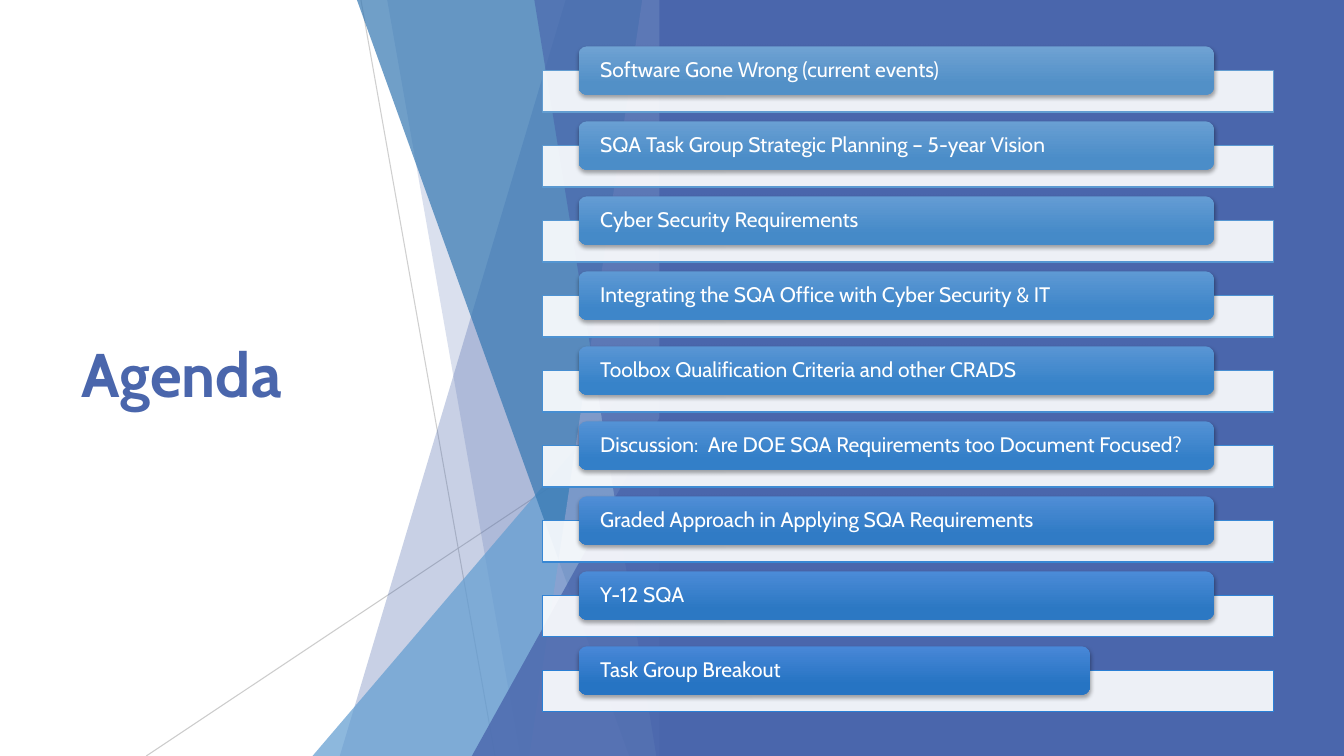
from lxml.etree import SubElement
from pptx import Presentation
from pptx.dml.color import RGBColor
from pptx.enum.shapes import MSO_CONNECTOR, MSO_SHAPE as SHAPE
from pptx.enum.text import MSO_ANCHOR, PP_ALIGN
from pptx.oxml.ns import qn
from pptx.util import Inches, Pt

WIDTH, HEIGHT = 13.33, 7.5
FONT = "Cabin"
WHITE = RGBColor(0xFF, 0xFF, 0xFF)
INDIGO = RGBColor(0x4A, 0x66, 0xAC)
SKY = RGBColor(0x62, 0x9D, 0xD1)
STEEL = RGBColor(0x34, 0x77, 0xB2)
LAVENDER = RGBColor(0x90, 0xA2, 0xCF)
GREY = RGBColor(0xBF, 0xBF, 0xBF)

TITLE = "Agenda"
# text, outline, gradient top, gradient bottom
AGENDA = [
    ("Software Gone Wrong (current events)", "629DD1", "6FA2D3", "5290C7"),
    ("SQA Task Group Strategic Planning – 5-year Vision", "5B99D1", "699FD3", "4B8DC8"),
    ("Cyber Security Requirements", "5496D2", "649CD4", "458AC8"),
    ("Integrating the SQA Office with Cyber Security & IT", "4D92D2", "5E99D4", "3E86C9"),
    ("Toolbox Qualification Criteria and other CRADS", "468ED2", "5995D4", "3783C9"),
    ("Discussion:  Are DOE SQA Requirements too Document Focused?",
     "3F8BD3", "5492D5", "337FC8"),
    ("Graded Approach in Applying SQA Requirements", "3787D4", "508ED6", "307BC5"),
    ("Y-12 SQA", "3083D5", "4B8BD7", "2C78C3"),
    ("Task Group Breakout", "297FD5", "4887D7", "2674C3"),
]

# x1, y1, x2, y2, opacity
HAIRLINES = [(3.58, 0, 4.91, HEIGHT, 75), (6.66, 4.03, 1.45, HEIGHT, 80)]
# Every facet reaches the right edge of the fan and the foot of the slide.
# A band has its left side's x at top and foot; a triangle its left and top.
FAN_RIGHT = 6.66
FACETS = [
    ("band", 5.61, 3.37, INDIGO, 30),
    ("band", 3.84, 5.16, INDIGO, 20),
    ("triangle", 3.1, 3.33, SKY, 72),
    ("band", 3.54, 6.24, STEEL, 70),
    ("band", 6.37, 5.25, LAVENDER, 70),
    ("band", 5.3, 6.51, INDIGO, 65),
    ("triangle", 4.68, 3.93, INDIGO, 80),
]

PANEL_LEFT = 6.54
ROW_TOP, ROW_PITCH = 0.46, 0.744
TRAY_LEFT, TRAY_WIDTH, TRAY_HEIGHT, TRAY_DROP = 5.38, 7.25, 0.41, 0.24
BAR_LEFT, BAR_WIDTH, LAST_BAR_WIDTH, BAR_HEIGHT = 5.74, 6.3, 5.07, 0.48


def inches(*values):
    return [Inches(v) for v in values]


def set_alpha(solid_fill, percent):
    SubElement(solid_fill[0], qn("a:alpha"), val=str(percent * 1000))


def paint(sp, color, opacity=100):
    """Give a shape a flat fill with no outline or shadow."""
    sp.shadow.inherit = False
    sp.fill.solid()
    sp.fill.fore_color.rgb = color
    sp.line.fill.background()
    if opacity < 100:
        set_alpha(sp.element.spPr.find(qn("a:solidFill")), opacity)


def add_hairline(shapes, x1, y1, x2, y2, opacity):
    line = shapes.add_connector(MSO_CONNECTOR.STRAIGHT, *inches(x1, y1, x2, y2))
    line.line.color.rgb = GREY
    line.line.width = Pt(0.75)
    spPr = line.element.spPr
    set_alpha(spPr.find(qn("a:ln")).find(qn("a:solidFill")), opacity)
    SubElement(spPr, qn("a:effectLst"))


def add_facet(shapes, kind, a, b, color, opacity):
    if kind == "triangle":
        sp = shapes.add_shape(SHAPE.ISOSCELES_TRIANGLE,
                              *inches(a, b, FAN_RIGHT - a, HEIGHT - b))
        sp.adjustments[0] = 1
    else:
        builder = shapes.build_freeform(*inches(a, 0))
        corners = [(FAN_RIGHT, 0), (FAN_RIGHT, HEIGHT), (b, HEIGHT)]
        builder.add_line_segments([inches(*c) for c in corners], close=True)
        sp = builder.convert_to_shape()
    paint(sp, color, opacity)


def write(sp, text, size, color, bold=False):
    tf = sp.text_frame
    tf.word_wrap = True
    tf.vertical_anchor = MSO_ANCHOR.MIDDLE
    p = tf.paragraphs[0]
    p.text = text
    p.alignment = PP_ALIGN.LEFT
    p.line_spacing = 0.9
    p.font.name, p.font.size, p.font.bold = FONT, Pt(size), bold
    p.font.color.rgb = color
    return tf


def add_soft_shadow(sp):
    effects = sp.element.spPr.find(qn("a:effectLst"))
    shadow = SubElement(effects, qn("a:outerShdw"), blurRad=str(Pt(3)), dist=str(Pt(2)),
                        dir="5400000", algn="ctr", rotWithShape="0")
    black = SubElement(shadow, qn("a:srgbClr"), val="000000")
    SubElement(black, qn("a:alpha"), val="35000")


def add_agenda_row(shapes, top, width, text, outline, light, dark):
    tray = shapes.add_shape(SHAPE.RECTANGLE, *inches(TRAY_LEFT, top + TRAY_DROP,
                                                     TRAY_WIDTH, TRAY_HEIGHT))
    paint(tray, WHITE, 90)
    tray.line.color.rgb = RGBColor.from_string(outline)
    tray.line.width = Pt(1)

    bar = shapes.add_shape(SHAPE.ROUNDED_RECTANGLE,
                           *inches(BAR_LEFT, top, width, BAR_HEIGHT))
    paint(bar, WHITE)
    bar.fill.gradient()
    bar.fill.gradient_angle = 270
    for stop, color, position in zip(bar.fill.gradient_stops, (light, dark), (0, 0.78)):
        stop.color.rgb = RGBColor.from_string(color)
        stop.position = position
    add_soft_shadow(bar)
    tf = write(bar, text, 15, WHITE)
    tf.margin_left = tf.margin_right = Inches(0.19)
    tf.margin_top = tf.margin_bottom = 0


def main():
    prs = Presentation()
    prs.slide_width, prs.slide_height = inches(WIDTH, HEIGHT)
    shapes = prs.slides.add_slide(prs.slide_layouts[6]).shapes

    write(shapes.add_textbox(*inches(0.71, 1.51, 3.88, 4.48)), TITLE, 44, INDIGO, True)
    for hairline in HAIRLINES:
        add_hairline(shapes, *hairline)
    for facet in FACETS:
        add_facet(shapes, *facet)
    panel = shapes.add_shape(SHAPE.RECTANGLE,
                             *inches(PANEL_LEFT, 0, WIDTH - PANEL_LEFT, HEIGHT))
    paint(panel, INDIGO)

    for i, row in enumerate(AGENDA):
        width = LAST_BAR_WIDTH if i == len(AGENDA) - 1 else BAR_WIDTH
        add_agenda_row(shapes, ROW_TOP + i * ROW_PITCH, width, *row)

    prs.save("out.pptx")


if __name__ == "__main__":
    main()
